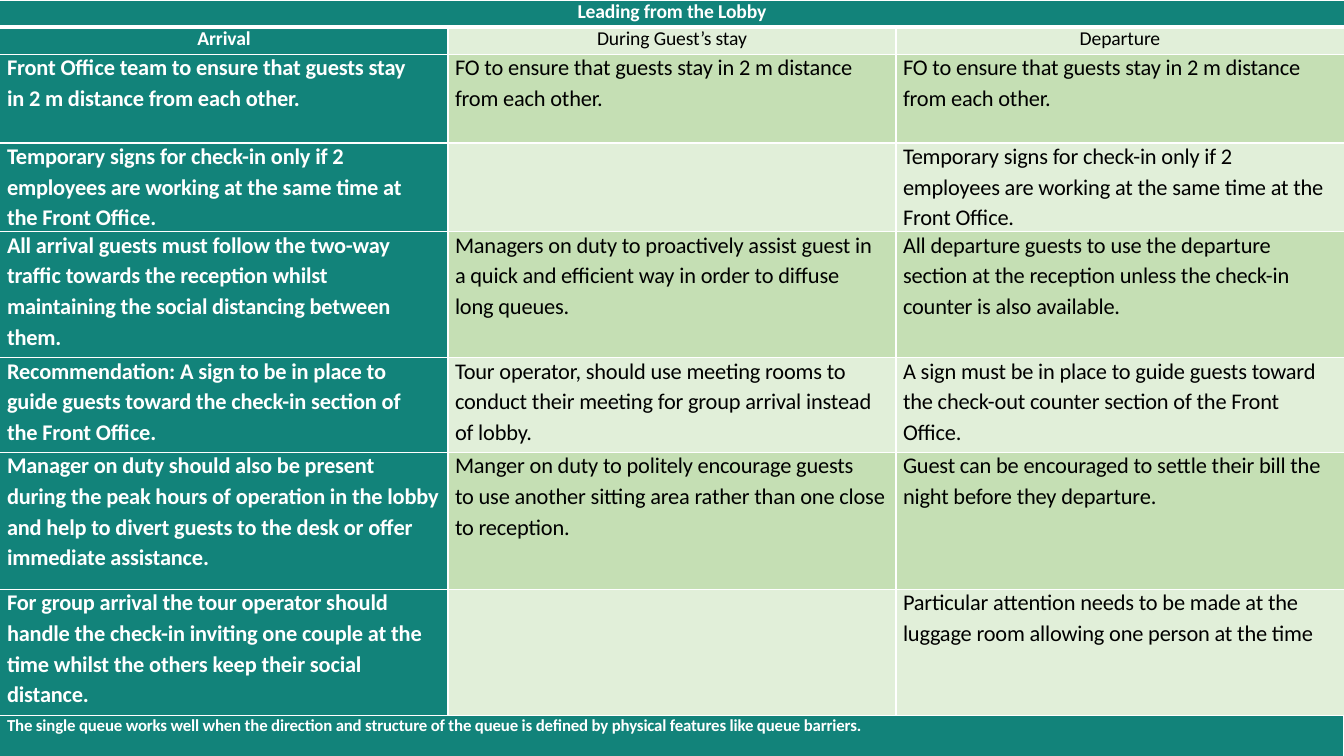
"""Builds the slide "Leading from the Lobby", one table that fills the page."""
from lxml.etree import SubElement
from pptx import Presentation
from pptx.dml.color import RGBColor
from pptx.enum.text import PP_ALIGN
from pptx.oxml.ns import qn
from pptx.util import Inches, Pt

HUES = {"teal": "12837A", "pale": "E1EFD9", "green": "C5DFB4",
        "white": "FFFFFF", "black": "000000"}
HIGH = [0.27, 0.27, 0.88, 0.88, 1.25, 0.94, 1.36, 1.25, 0.4]
ROWS = [
    ["", "Leading from the Lobby", ""],
    ["Arrival", "During Guest’s stay", "Departure"],
    ["Front Office team to ensure that guests stay\nin 2 m distance from each other.",
     "FO to ensure that guests stay in 2 m distance\nfrom each other.",
     "FO to ensure that guests stay in 2 m distance\nfrom each other."],
    ["Temporary signs for check-in only if 2\n"
     "employees are working at the same time at\vthe Front Office.",
     "",
     "Temporary signs for check-in only if 2\n"
     "employees are working at the same time at the Front Office."],
    ["All arrival guests must follow the two-way\n"
     "traffic towards the reception whilst maintaining the social distancing between them.",
     "Managers on duty to proactively assist guest in\n"
     "a quick and efficient way in order to diffuse\nlong queues.",
     "All departure guests to use the departure\n"
     "section at the reception unless the check-in\ncounter is also available."],
    ["Recommendation: A sign to be in place to\n"
     "guide guests toward the check-in section of\nthe Front Office.",
     "Tour operator, should use meeting rooms to\n"
     "conduct their meeting for group arrival instead\nof lobby.",
     "A sign must be in place to guide guests toward\n"
     "the check-out counter section of the Front\nOffice."],
    ["Manager on duty should also be present\n"
     "during the peak hours of operation in the lobby and help to divert guests "
     "to the desk or offer immediate assistance.",
     "Manger on duty to politely encourage guests\n"
     "to use another sitting area rather than one close to reception.",
     "Guest can be encouraged to settle their bill the\nnight before they departure."],
    ["For group arrival the tour operator should\n"
     "handle the check-in inviting one couple at the time whilst the others "
     "keep their social distance.",
     "",
     "Particular attention needs to be made at the\n"
     "luggage room allowing one person at the time"],
    ["The single queue works well when the direction and structure of the queue "
     "is defined by physical features like queue barriers.", "", ""],
]
LAST = len(ROWS) - 1


def edge(cell, side, width):
    props = cell._tc.get_or_add_tcPr()
    line = SubElement(props, qn(f"a:ln{side}"), w=str(Pt(width)))
    if width:
        fill = SubElement(line, qn("a:solidFill"))
        SubElement(fill, qn("a:srgbClr"), val=HUES["white"])
    else:
        SubElement(line, qn("a:noFill"))


def write(cell, text, size, hue, bold, head):
    cell.text_frame.text = text
    for place, para in enumerate(cell.text_frame.paragraphs):
        para.alignment = PP_ALIGN.CENTER if head else PP_ALIGN.LEFT
        if place:
            para.line_spacing = 1.12
        if not text:
            para._p.get_or_add_endParaRPr().set("sz", str(size * 100))
        for run in para.runs:
            run.font.name = "Calibri"
            run.font.size = Pt(size)
            run.font.bold = bold
            run.font.color.rgb = RGBColor.from_string(HUES[hue])
            run._r.get_or_add_rPr().set("spc", "-10")


deck = Presentation()
deck.slide_width, deck.slide_height = Inches(13.33), Inches(7.5)
slide = deck.slides.add_slide(deck.slide_layouts[6])
grid = slide.shapes.add_table(len(ROWS), 3, 0, 0, deck.slide_width, deck.slide_height).table
grid.first_row = grid.horz_banding = False
for row, high in zip(grid.rows, HIGH):
    row.height = Inches(high)

for r, texts in enumerate(ROWS):
    head = r < 2
    size = 14 if head else 12 if r == LAST else 16
    for c, text in enumerate(texts):
        cell = grid.cell(r, c)
        dark = c == 0 or r in (0, LAST)
        cell.margin_top = cell.margin_bottom = 0
        cell.margin_left = Inches(0 if head else 0.07)
        cell.margin_right = Inches(0 if head else 0.08)
        edge(cell, "L", 1 if c and r else 0)
        edge(cell, "R", 0.5 if c == 2 else 1 if r else 0)
        edge(cell, "T", 0.5 if r == 0 else 3 if r == 1 else 1)
        edge(cell, "B", 3 if r == 0 else 0 if r == LAST else 1)
        cell.fill.solid()
        fill = "teal" if dark else "pale" if r % 2 else "green"
        cell.fill.fore_color.rgb = RGBColor.from_string(HUES[fill])
        write(cell, text, size, "white" if dark else "black", dark, head)

grid.cell(LAST, 0).merge(grid.cell(LAST, 2))
deck.save("out.pptx")
